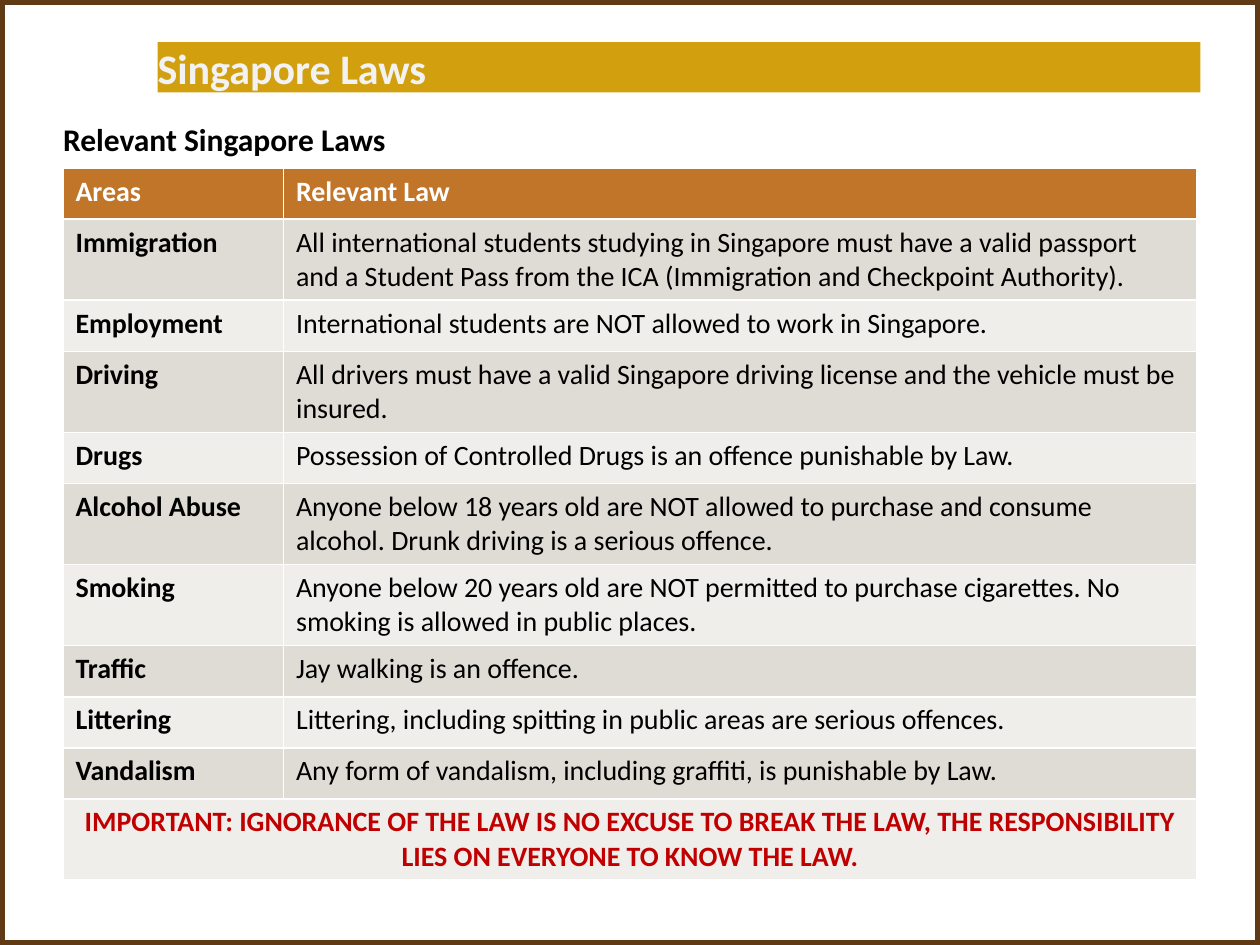
import pptx
import pptx.dml.color
import pptx.enum.shapes
import pptx.enum.text
import pptx.util

Pt = pptx.util.Pt
Align = pptx.enum.text.PP_ALIGN
Anchor = pptx.enum.text.MSO_ANCHOR

LAWS = [
    ("Immigration", "All international students studying in Singapore must have a valid passport "
     "and a Student Pass from the ICA (Immigration and Checkpoint Authority)."),
    ("Employment", "International students are NOT allowed to work in Singapore."),
    ("Driving", "All drivers must have a valid Singapore driving license and the vehicle must be insured."),
    ("Drugs", "Possession of Controlled Drugs is an offence punishable by Law."),
    ("Alcohol Abuse", "Anyone below 18 years old are NOT allowed to purchase and consume alcohol. "
     "Drunk driving is a serious offence."),
    ("Smoking", "Anyone below 20 years old are NOT permitted to purchase cigarettes. "
     "No smoking is allowed in public places."),
    ("Traffic", "Jay walking is an offence."),
    ("Littering", "Littering, including spitting in public areas are serious offences."),
    ("Vandalism", "Any form of vandalism, including graffiti, is punishable by Law."),
]
WARNING = ("IMPORTANT: IGNORANCE OF THE LAW IS NO EXCUSE TO BREAK THE LAW, "
           "THE RESPONSIBILITY LIES ON EVERYONE TO KNOW THE LAW.")


def color(hex_string):
    return pptx.dml.color.RGBColor.from_string(hex_string)


def write(frame, text, size, hex_string, bold=True, align=Align.LEFT):
    """Put one formatted run in the first paragraph of a text frame."""
    para = frame.paragraphs[0]
    para.alignment = align
    span = para.add_run()
    span.text = text
    span.font.name = "Calibri"
    span.font.size = Pt(size)
    span.font.bold = bold
    span.font.color.rgb = color(hex_string)


deck = pptx.Presentation()
deck.slide_width, deck.slide_height = Pt(720), Pt(540)
page = deck.slides.add_slide(deck.slide_layouts[5])

# Page border
border = page.shapes.add_shape(pptx.enum.shapes.MSO_SHAPE.RECTANGLE, 0, 0, Pt(720), Pt(540))
border.shadow.inherit = False
border.fill.background()
border.line.color.rgb = color("603A14")
border.line.width = Pt(6)

# Title band and heading
title = page.shapes.title
title.left, title.top, title.width, title.height = Pt(90), Pt(24), Pt(596), Pt(28.8)
title.fill.solid()
title.fill.fore_color.rgb = color("D29F0F")
heading = page.shapes.add_textbox(Pt(36), Pt(68.5), Pt(638), Pt(22))
for box, text, size, hex_string in [
    (title, "Singapore Laws", 24, "F2F2F2"),
    (heading, "Relevant Singapore Laws", 18, "000000"),
]:
    frame = box.text_frame
    frame.word_wrap = True
    frame.auto_size = pptx.enum.text.MSO_AUTO_SIZE.NONE
    frame.vertical_anchor = Anchor.TOP
    frame.margin_left = frame.margin_top = frame.margin_right = frame.margin_bottom = 0
    write(frame, text, size, hex_string)

# Table of laws: header, one row per area, merged warning
row_count = len(LAWS) + 2
row_height = Pt(29.2)
table = page.shapes.add_table(row_count, 2, Pt(36), Pt(96), Pt(648), row_height * row_count).table
table.columns[0].width, table.columns[1].width = Pt(126), Pt(522)

for row_index, row in enumerate(table.rows):
    row.height = row_height
    for cell in row.cells:
        cell.fill.solid()
        band = "DFDCD5" if row_index % 2 else "F0EEEB"
        cell.fill.fore_color.rgb = color(band if row_index else "C17529")

for column, text in enumerate(("Areas", "Relevant Law")):
    write(table.cell(0, column).text_frame, text, 16, "FFFFFF")
for row_index, (area, law) in enumerate(LAWS, start=1):
    write(table.cell(row_index, 0).text_frame, area, 16, "000000")
    write(table.cell(row_index, 1).text_frame, law, 16, "000000", bold=False)

warning = table.cell(row_count - 1, 0)
warning.merge(table.cell(row_count - 1, 1))
write(warning.text_frame, WARNING, 16, "C00000", align=Align.CENTER)

deck.save("out.pptx")
